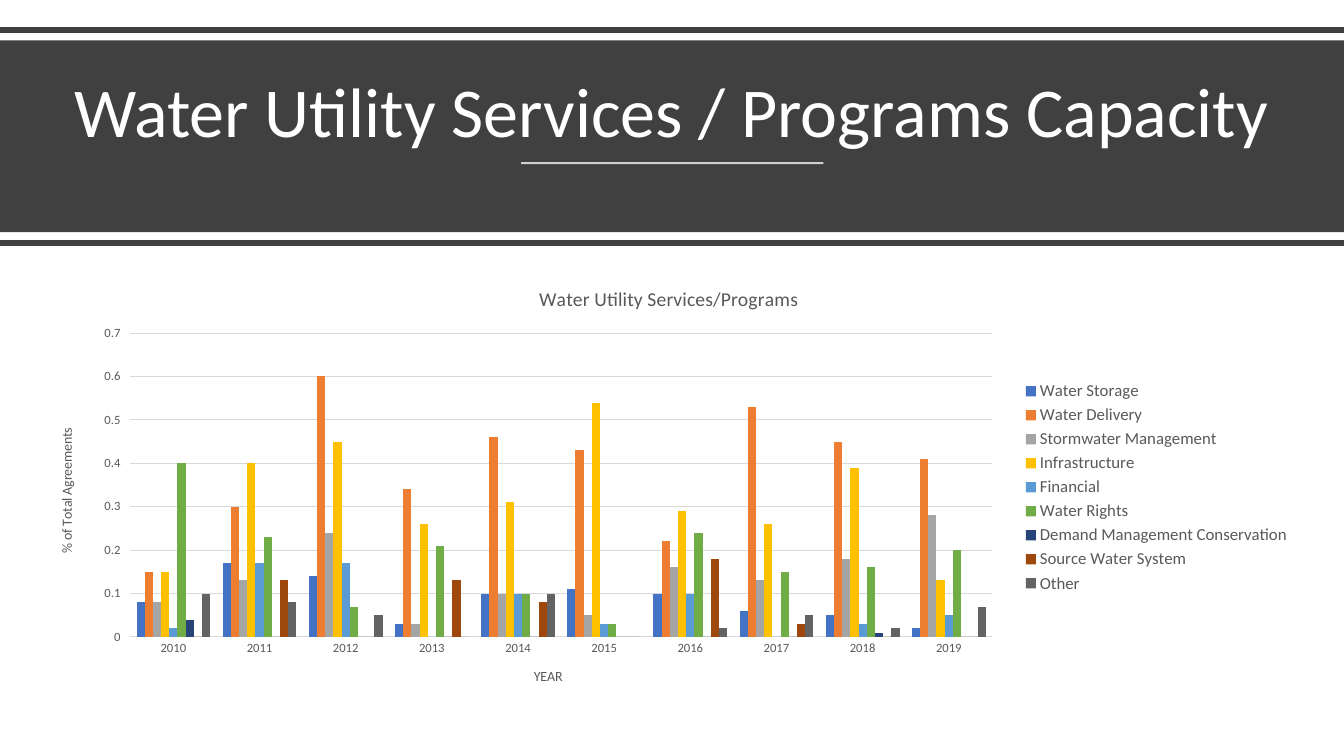
import pptx
import pptx.util
import pptx.oxml
import pptx.oxml.ns
import pptx.chart.data
import pptx.dml.color
import pptx.enum.chart
import pptx.enum.shapes
import pptx.enum.text
from dataclasses import dataclass

Cm = pptx.util.Cm
Pt = pptx.util.Pt
qn = pptx.oxml.ns.qn
rgb = pptx.dml.color.RGBColor.from_string


@dataclass
class Theme:
    font: str = "Calibri"
    band: str = "404040"
    white: str = "FFFFFF"
    gray: str = "595959"
    grid: str = "D9D9D9"
    title_size: float = 50
    chart_title_size: float = 14
    legend_size: float = 12
    axis_title_size: float = 10
    label_size: float = 9


theme = Theme()


def write_text(text_frame, text, size, color, line_spacing=None):
    paragraph = text_frame.paragraphs[0]
    paragraph.alignment = pptx.enum.text.PP_ALIGN.CENTER
    if line_spacing:
        paragraph.line_spacing = line_spacing
    run = paragraph.add_run()
    run.text = text
    run.font.name = theme.font
    run.font.size = Pt(size)
    run.font.bold = False
    run.font.color.rgb = rgb(color)


def set_layout(element, index, layout_xml):
    for old_layout in element.findall(qn("c:layout")):
        element.remove(old_layout)
    element.insert(index, pptx.oxml.parse_xml(layout_xml))


presentation = pptx.Presentation()
presentation.slide_width = Cm(33.87)
presentation.slide_height = Cm(19.05)
slide = presentation.slides.add_slide(presentation.slide_layouts[6])

band = slide.shapes.add_shape(
    pptx.enum.shapes.MSO_SHAPE.RECTANGLE, Cm(0), Cm(1.02), Cm(33.87), Cm(4.83))
band.shadow.inherit = False
band.fill.solid()
band.fill.fore_color.rgb = rgb(theme.band)
band.line.fill.background()

rules = [
    (0, 33.87, 0.76, theme.band, 4, 100),
    (13.13, 20.75, 4.11, theme.white, 1.5, 75),
    (0, 33.87, 6.12, theme.band, 4, 100),
]
for left, right, top, color, width, opacity in rules:
    rule = slide.shapes.add_connector(
        pptx.enum.shapes.MSO_CONNECTOR.STRAIGHT, Cm(left), Cm(top), Cm(right), Cm(top))
    rule.line.color.rgb = rgb(color)
    rule.line.width = Pt(width)
    if opacity < 100:
        alpha = pptx.oxml.parse_xml(
            f'<a:alpha {pptx.oxml.ns.nsdecls("a")} val="{opacity * 1000}"/>')
        rule.element.spPr.find(".//" + qn("a:srgbClr")).append(alpha)
    rule.element.spPr.append(
        pptx.oxml.parse_xml(f'<a:effectLst {pptx.oxml.ns.nsdecls("a")}/>'))

title = slide.shapes.add_textbox(Cm(1.47), Cm(1.37), Cm(30.94), Cm(2.59))
title.text_frame.word_wrap = True
title.text_frame.vertical_anchor = pptx.enum.text.MSO_ANCHOR.BOTTOM
write_text(title.text_frame, "Water Utility Services / Programs Capacity",
           size=theme.title_size, color=theme.white, line_spacing=0.9)

programs = [
    ("Water Storage", "4472C4", [0.08, 0.17, 0.14, 0.03, 0.1, 0.11, 0.1, 0.06, 0.05, 0.02]),
    ("Water Delivery", "ED7D31", [0.15, 0.3, 0.6, 0.34, 0.46, 0.43, 0.22, 0.53, 0.45, 0.41]),
    ("Stormwater Management", "A5A5A5", [0.08, 0.13, 0.24, 0.03, 0.1, 0.05, 0.16, 0.13, 0.18, 0.28]),
    ("Infrastructure", "FFC000", [0.15, 0.4, 0.45, 0.26, 0.31, 0.54, 0.29, 0.26, 0.39, 0.13]),
    ("Financial", "5B9BD5", [0.02, 0.17, 0.17, 0, 0.1, 0.03, 0.1, 0, 0.03, 0.05]),
    ("Water Rights", "70AD47", [0.4, 0.23, 0.07, 0.21, 0.1, 0.03, 0.24, 0.15, 0.16, 0.2]),
    ("Demand Management Conservation", "264478", [0.04, 0, 0, 0, 0, 0, 0, 0, 0.01, 0]),
    ("Source Water System", "9E480E", [0, 0.13, 0, 0.13, 0.08, 0, 0.18, 0.03, 0, 0]),
    ("Other", "636363", [0.1, 0.08, 0.05, 0, 0.1, 0, 0.02, 0.05, 0.02, 0.07]),
]
chart_data = pptx.chart.data.CategoryChartData()
chart_data.categories = [str(year) for year in range(2010, 2020)]
for name, color, values in programs:
    chart_data.add_series(name, values)
chart = slide.shapes.add_chart(
    pptx.enum.chart.XL_CHART_TYPE.COLUMN_CLUSTERED,
    Cm(0.89), Cm(6.73), Cm(31.93), Cm(11.1), chart_data).chart
chart.font.name = theme.font
chart.font.size = Pt(theme.axis_title_size)

plot = chart.plots[0]
plot.gap_width = 150
plot.overlap = 0
plot.vary_by_categories = False
for series, (name, color, values) in zip(plot.series, programs):
    series.format.fill.solid()
    series.format.fill.fore_color.rgb = rgb(color)

chart.has_title = True
write_text(chart.chart_title.text_frame, "Water Utility Services/Programs",
           size=theme.chart_title_size, color=theme.gray)
chart.chart_title.include_in_layout = False

year_axis = chart.category_axis
share_axis = chart.value_axis
for axis, axis_text in [(year_axis, "YEAR"), (share_axis, "% of Total Agreements")]:
    axis.has_title = True
    write_text(axis.axis_title.text_frame, axis_text,
               size=theme.axis_title_size, color=theme.gray)
    axis.tick_labels.font.name = theme.font
    axis.tick_labels.font.size = Pt(theme.label_size)
    axis.tick_labels.font.color.rgb = rgb(theme.gray)
share_title_body = share_axis.axis_title.element.find(".//" + qn("a:bodyPr"))
share_title_body.set("rot", "-5400000")
share_title_body.set("vert", "horz")

year_axis.major_tick_mark = pptx.enum.chart.XL_TICK_MARK.NONE
share_axis.major_tick_mark = pptx.enum.chart.XL_TICK_MARK.OUTSIDE
share_axis.minimum_scale = 0
share_axis.maximum_scale = 0.7
share_axis.major_unit = 0.1
share_axis.format.line.fill.background()
for line in (year_axis.format.line, share_axis.major_gridlines.format.line):
    line.color.rgb = rgb(theme.grid)
    line.width = Pt(0.75)

chart.has_legend = True
chart.legend.position = pptx.enum.chart.XL_LEGEND_POSITION.RIGHT
chart.legend.include_in_layout = False
chart.legend.font.name = theme.font
chart.legend.font.size = Pt(theme.legend_size)
chart.legend.font.color.rgb = rgb(theme.gray)

chart_areas = [
    ("c:plotArea", 0, '<c:layoutTarget val="inner"/>', (0.075, 0.15, 0.68, 0.69)),
    ("c:legend", 1, "", (0.775, 0.25, 0.22, 0.5)),
]
for tag, index, target, (left, top, width, height) in chart_areas:
    set_layout(chart.element.find(".//" + qn(tag)), index, f"""
        <c:layout {pptx.oxml.ns.nsdecls("c")}><c:manualLayout>{target}
        <c:xMode val="edge"/><c:yMode val="edge"/>
        <c:x val="{left}"/><c:y val="{top}"/><c:w val="{width}"/><c:h val="{height}"/>
        </c:manualLayout></c:layout>""")

presentation.save("out.pptx")
